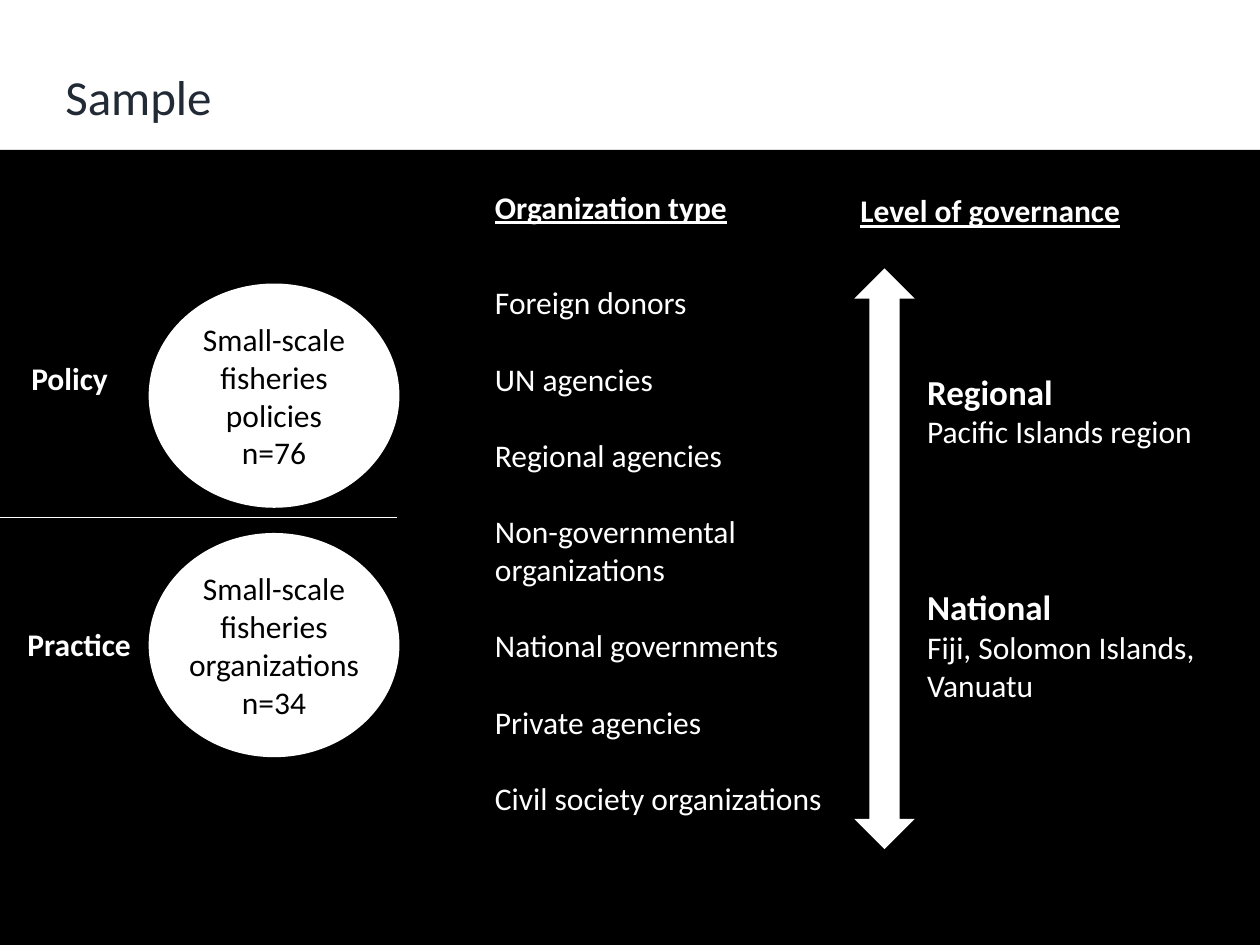
import pptx
import pptx.util
import pptx.dml.color
import pptx.enum.shapes
import pptx.enum.text
import pptx.oxml.ns
import lxml.etree

BLACK = pptx.dml.color.RGBColor(0x00, 0x00, 0x00)
WHITE = pptx.dml.color.RGBColor(0xFF, 0xFF, 0xFF)
NAVY = pptx.dml.color.RGBColor(0x22, 0x2A, 0x35)
SHAPES = pptx.enum.shapes.MSO_SHAPE

# Grid of 100 columns by 75 rows on a 10 x 7.5 inch slide
COLUMNS, ROWS = 100, 75


class SlideBuilder:
    """Holds the style and the current slide; places elements on the grid."""

    font = "Calibri"
    body_size = 18

    def __init__(self, deck):
        self.slide = deck.slides.add_slide(deck.slide_layouts[6])
        self.column = deck.slide_width / COLUMNS
        self.row = deck.slide_height / ROWS

    def place(self, left, top, width, height):
        return (round(left * self.column), round(top * self.row),
                round(width * self.column), round(height * self.row))

    def fill_text(self, frame, lines, color, align=None, gap=0):
        """Each line is a text and the settings that differ from body text."""
        frame.word_wrap = True
        for index, (text, settings) in enumerate(lines):
            para = frame.add_paragraph() if index else frame.paragraphs[0]
            para.alignment = align
            if index and gap:
                para.space_before = pptx.util.Pt(gap)
            span = para.add_run()
            span.text = text
            span.font.name = self.font
            span.font.size = pptx.util.Pt(settings.get("size", self.body_size))
            span.font.bold = settings.get("bold", False)
            span.font.underline = settings.get("underline", False)
            span.font.color.rgb = color

    def text(self, grid, lines, color=WHITE, gap=0):
        box = self.slide.shapes.add_textbox(*self.place(*grid))
        self.fill_text(box.text_frame, lines, color, gap=gap)

    def shape(self, kind, grid, fill):
        shape = self.slide.shapes.add_shape(kind, *self.place(*grid))
        shape.shadow.inherit = False
        shape.fill.solid()
        shape.fill.fore_color.rgb = fill
        shape.line.fill.background()
        return shape

    def bubble(self, grid, lines):
        frame = self.shape(SHAPES.OVAL, grid, WHITE).text_frame
        frame.margin_left = frame.margin_right = 0
        frame.vertical_anchor = pptx.enum.text.MSO_ANCHOR.MIDDLE
        self.fill_text(frame, lines, BLACK, pptx.enum.text.PP_ALIGN.CENTER)

    def rule(self, left, right, row):
        start_x, y, width, _ = self.place(left, row, right - left, 0)
        line = self.slide.shapes.add_connector(
            pptx.enum.shapes.MSO_CONNECTOR.STRAIGHT, start_x, y, start_x + width, y)
        line.line.color.rgb = WHITE
        line.line.width = pptx.util.Pt(0.5)
        lxml.etree.SubElement(line._element.spPr, pptx.oxml.ns.qn("a:effectLst"))


def main():
    deck = pptx.Presentation()
    deck.slide_width = pptx.util.Inches(10)
    deck.slide_height = pptx.util.Inches(7.5)
    builder = SlideBuilder(deck)
    bold = {"bold": True}
    heading = {"bold": True, "underline": True}
    place_name = {"bold": True, "size": 20}

    # Black panel and title
    builder.shape(SHAPES.RECTANGLE, (0, 11.9, COLUMNS, ROWS - 11.9), BLACK)
    builder.text((4.2, 4.8, 81, 5.7), [("Sample", {"size": 28})], NAVY)

    # Policy and practice samples
    samples = [
        ("Policy", 1.5, 28, 22.5, "policies", 76),
        ("Practice", 1.2, 49.1, 42.3, "organizations", 34),
    ]
    for label, left, label_top, bubble_top, noun, count in samples:
        builder.text((left, label_top, 14.6, 4), [(label, bold)])
        builder.bubble((11.8, bubble_top, 19.9, 17.8),
                       [(f"Small-scale fisheries {noun}", {}), (f"n={count}", {})])
    builder.rule(0, 31.5, 41.1)

    # Organization types, one blank line's height apart
    organizations = [
        "Foreign donors", "UN agencies", "Regional agencies",
        "Non-governmental organizations", "National governments",
        "Private agencies", "Civil society organizations",
    ]
    builder.text((38.3, 14.4, 24.7, 4), [("Organization type", heading)])
    builder.text((38.3, 22, 29.5, 43.4), [(name, {}) for name in organizations], gap=22)

    # Levels of governance
    builder.text((67.3, 14.7, 24.7, 4), [("Level of governance", heading)])
    builder.shape(SHAPES.UP_DOWN_ARROW, (67.8, 21.3, 4.8, 46.1), WHITE)
    levels = [
        (28.9, 7.4, "Regional", ["Pacific Islands region"]),
        (46, 10.4, "National", ["Fiji, Solomon Islands,", "Vanuatu"]),
    ]
    for top, height, level, places in levels:
        builder.text((72.6, top, 27.4, height),
                     [(level, place_name)] + [(place, {}) for place in places])

    deck.save("out.pptx")


if __name__ == "__main__":
    main()
